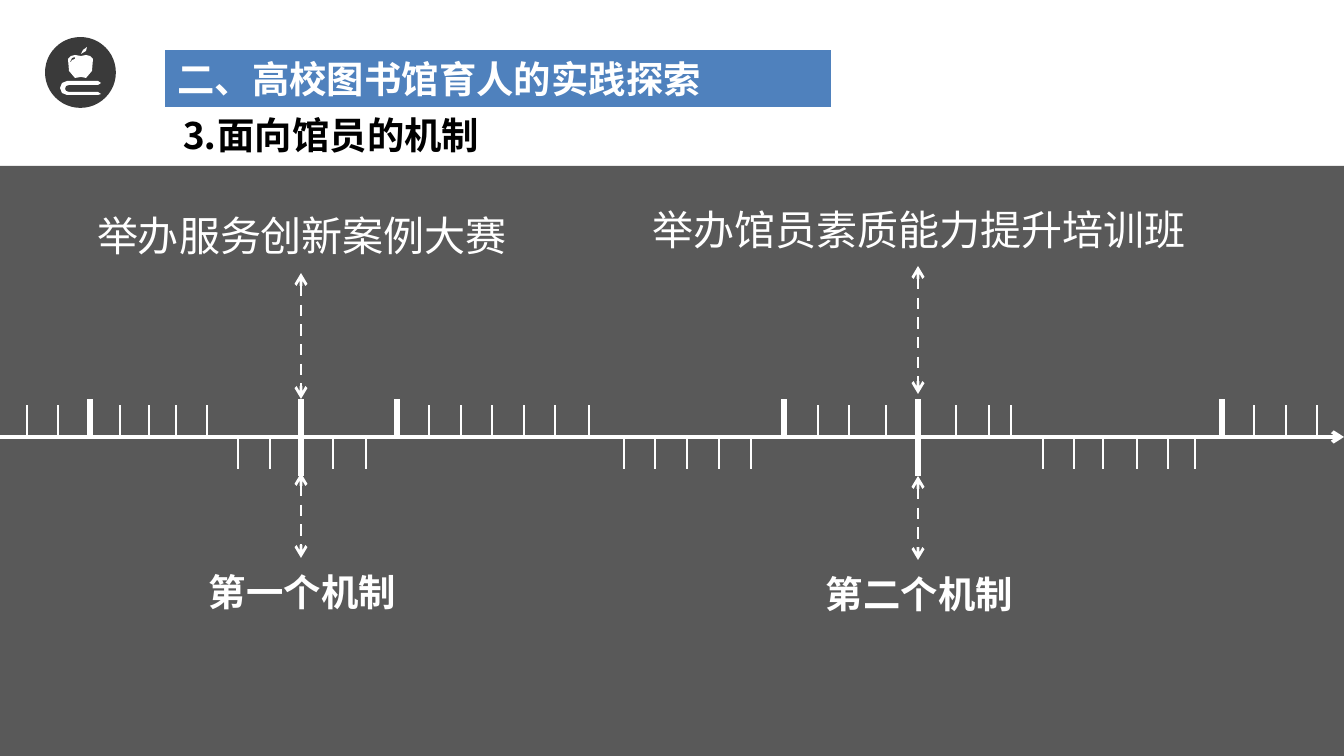
from lxml.etree import SubElement
from pptx import Presentation
from pptx.dml.color import RGBColor
from pptx.enum.dml import MSO_LINE
from pptx.enum.shapes import MSO_CONNECTOR, MSO_SHAPE
from pptx.enum.text import MSO_ANCHOR, MSO_AUTO_SIZE, PP_ALIGN
from pptx.oxml.ns import qn
from pptx.util import Emu, Pt

FONT = "Noto Sans CJK SC"
WHITE, BLACK, GREY, DARK, BLUE = "FFFFFF", "000000", "595959", "3A3A3A", "4F81BD"

AXIS_Y = 437
TICKS_UP = (27, 58, 120, 149, 176, 207, 429, 461, 492, 524, 555, 589,
            818, 849, 886, 956, 989, 1011, 1254, 1286, 1317)
TICKS_DOWN = (238, 270, 333, 366, 624, 655, 687, 719, 751,
              1043, 1074, 1103, 1137, 1168, 1195)
MAJOR_UP = (90, 301, 397, 784, 918, 1222)
MAJOR_DOWN = (301, 918)

# Outlines in px, each a list of corner points
BOOK = [(101, 94), (98, 95), (67, 95), (62, 93), (60, 88), (62, 83), (67, 81),
        (98, 81), (101, 83), (98, 85), (69, 85), (66, 86), (65, 89), (66, 91),
        (69, 92), (98, 92)]
LEAF = [(81, 54), (83, 50), (87, 47), (86, 51)]
APPLE = [(93, 59), (90, 56), (86, 55), (81, 56), (75, 55), (71, 56), (68, 59),
         (69, 71), (75, 78), (81, 77), (86, 78), (92, 71)]
HIGHLIGHT = [(75, 59), (72, 60), (71, 62), (70, 62), (72, 58), (75, 57)]


def px(n):
    return Emu(round(n * 914400 / 134.4))


def rgb(color):
    return RGBColor.from_string(color)


def paint(sp, fill, line=None, width=1):
    sp.fill.solid()
    sp.fill.fore_color.rgb = rgb(fill)
    if line:
        sp.line.color.rgb = rgb(line)
        sp.line.width = Pt(width)
    else:
        sp.line.fill.background()


def add_box(shapes, kind, x, y, w, h, fill, line=None):
    sp = shapes.add_shape(kind, px(x), px(y), px(w), px(h))
    sp.shadow.inherit = False
    paint(sp, fill, line)


def add_line(shapes, x1, y1, x2, y2, width, dashed=False, arrows=()):
    """Draw a white line; arrows names its ends, headEnd or tailEnd."""
    line = shapes.add_connector(
        MSO_CONNECTOR.STRAIGHT, px(x1), px(y1), px(x2), px(y2))
    line.line.color.rgb = rgb(WHITE)
    line.line.width = Pt(width)
    if dashed:
        line.line.dash_style = MSO_LINE.DASH
    for end in arrows:
        SubElement(line.line._get_or_add_ln(), qn(f"a:{end}"), type="arrow")
    SubElement(line._element.spPr, qn("a:effectLst"))


def write(sp, text, size=20, color=WHITE, bold=False, align=PP_ALIGN.CENTER,
          anchor=MSO_ANCHOR.TOP, wrap=True):
    tf = sp.text_frame
    tf.auto_size = MSO_AUTO_SIZE.NONE
    tf.word_wrap = wrap
    tf.vertical_anchor = anchor
    p = tf.paragraphs[0]
    p.alignment = align
    r = p.add_run()
    r.text = text
    r.font.size, r.font.bold = Pt(size), bold
    r.font.color.rgb = rgb(color)
    r.font.name = FONT
    SubElement(r._r.get_or_add_rPr(), qn("a:ea"), typeface=FONT)


def add_text(slide, x, y, w, h, text, **fmt):
    write(slide.shapes.add_textbox(px(x), px(y), px(w), px(h)), text, **fmt)


def add_title(slide, text):
    title = slide.shapes.title
    title.left, title.top = px(164), px(49)
    title.width, title.height = px(668), px(59)
    paint(title, BLUE, WHITE, 0.75)
    write(title, text, bold=True, align=PP_ALIGN.LEFT, anchor=MSO_ANCHOR.MIDDLE)


def add_icon(slide):
    shapes = slide.shapes.add_group_shape().shapes
    add_box(shapes, MSO_SHAPE.OVAL, 46, 38, 69, 69, DARK, DARK)
    builder = shapes.build_freeform(*BOOK[0], scale=px(1))
    builder.add_line_segments(BOOK[1:])
    for outline in (LEAF, APPLE, HIGHLIGHT):
        builder.move_to(*outline[0])
        builder.add_line_segments(outline[1:])
    sp = builder.convert_to_shape()
    sp.shadow.inherit = False
    paint(sp, WHITE)


def add_timeline(slide):
    shapes = slide.shapes.add_group_shape().shapes
    add_line(shapes, 0, AXIS_Y, 1344, AXIS_Y, 2, arrows=["tailEnd"])
    for xs, end, width in ((TICKS_UP, 405, 0.75), (TICKS_DOWN, 469, 0.75),
                           (MAJOR_UP, 399, 3), (MAJOR_DOWN, 476, 3)):
        for x in xs:
            add_line(shapes, x, AXIS_Y, x, end, width)


def add_milestone(slide, x, label, label_box, upper, lower, name, name_y):
    """Put a label above and a name below the timeline, each with its arrow."""
    for y1, y2 in (upper, lower):
        add_line(slide.shapes, x, y1, x, y2, 1.5, dashed=True,
                 arrows=["headEnd", "tailEnd"])
    add_text(slide, *label_box, label, size=22, wrap=False)
    add_text(slide, x - 120, name_y, 243, 59, name, bold=True)


def main():
    prs = Presentation()
    prs.slide_width, prs.slide_height = px(1344), px(756)
    slide = prs.slides.add_slide(prs.slide_layouts[5])
    add_box(slide.shapes, MSO_SHAPE.RECTANGLE, 0, 166, 1344, 590, GREY)
    add_timeline(slide)
    add_milestone(slide, 301, "举办服务创新案例大赛", (81, 204, 442, 63),
                  (273, 399), (473, 558), "第一个机制", 563)
    add_milestone(slide, 918, "举办馆员素质能力提升培训班", (636, 198, 566, 63),
                  (266, 394), (476, 560), "第二个机制", 565)
    add_icon(slide)
    add_text(slide, 167, 106, 812, 59, "⒊面向馆员的机制", color=BLACK,
             bold=True, align=PP_ALIGN.LEFT)
    add_title(slide, "二、高校图书馆育人的实践探索")
    prs.save("out.pptx")


if __name__ == "__main__":
    main()
